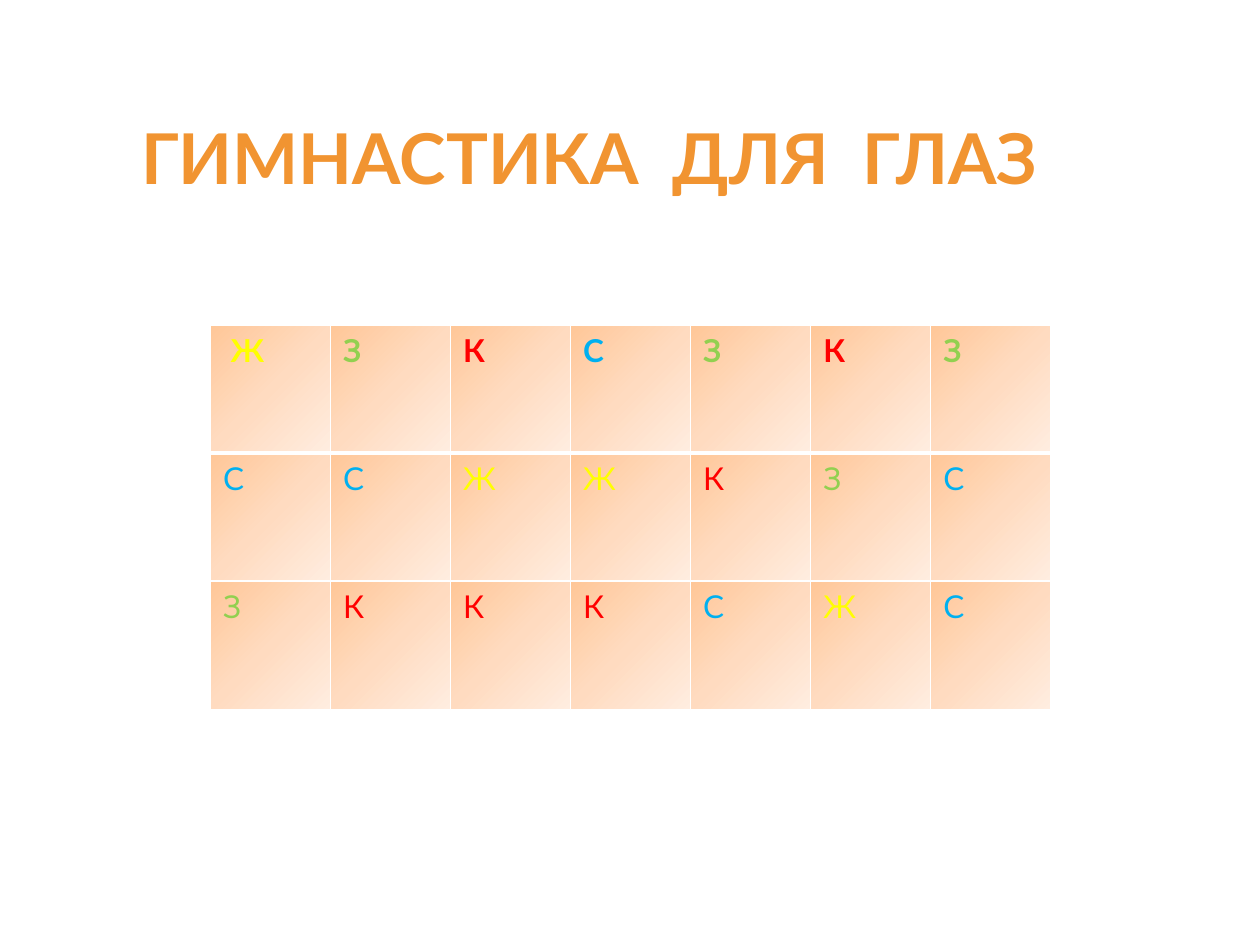
from dataclasses import dataclass

from lxml import etree
from pptx import Presentation
from pptx.dml.color import RGBColor
from pptx.enum.text import MSO_ANCHOR, MSO_AUTO_SIZE, PP_ALIGN
from pptx.oxml.ns import qn
from pptx.util import Inches, Pt

LEFT = PP_ALIGN.LEFT
TOP = MSO_ANCHOR.TOP
FIT_SHAPE = MSO_AUTO_SIZE.SHAPE_TO_FIT_TEXT


@dataclass(frozen=True)
class Theme:
    font: str = "Lato"
    title_size: int = 40
    letter_size: int = 18
    black: str = "000000"
    yellow: str = "FFFF00"
    green: str = "92D050"
    red: str = "FF0000"
    blue: str = "00B0F0"
    border: str = "FFFFFF"
    title_stops: tuple = ((0, "F6A75F"), (49, "F19431"), (50, "DF8B0E"),
                          (92, "C07B14"), (100, "BD7913"))
    cell_stops: tuple = ((0, "FFC798"), (50, "FFDBC0"), (100, "FFEDE0"))


theme = Theme()


def add_gradient(properties, position, stops, angle):
    """Insert a linear gradient fill among the children of a properties element."""
    gradient = etree.Element(qn("a:gradFill"), rotWithShape="1")
    stop_list = etree.SubElement(gradient, qn("a:gsLst"))
    for percent, color in stops:
        stop = etree.SubElement(stop_list, qn("a:gs"), pos=str(percent * 1000))
        etree.SubElement(stop, qn("a:srgbClr"), val=color)
    etree.SubElement(gradient, qn("a:lin"), ang=str(angle * 60000), scaled="0")
    properties.insert(position, gradient)


def write_text(paragraph, text, size, color=None, bold=False, stops=None):
    """Add one formatted run, filled with a solid color or a gradient."""
    paragraph.alignment = LEFT
    run = paragraph.add_run()
    run.text = text
    run.font.name = theme.font
    run.font.size = Pt(size)
    run.font.bold = bold
    if stops:
        add_gradient(run.font._element, 0, stops, angle=90)
    else:
        run.font.color.rgb = RGBColor.from_string(color)


presentation = Presentation()
presentation.slide_width = Inches(10)
presentation.slide_height = Inches(7.5)
slide = presentation.slides.add_slide(presentation.slide_layouts[5])

# Title
title = slide.shapes.title
title.left, title.top = Inches(1.02), Inches(0.86)
title.width, title.height = Inches(8.2), Inches(0.77)
title.text_frame.word_wrap = True
title.text_frame.auto_size = FIT_SHAPE
title.text_frame.vertical_anchor = TOP
write_text(title.text_frame.paragraphs[0], "ГИМНАСТИКА  ДЛЯ  ГЛАЗ",
           size=theme.title_size, bold=True, stops=theme.title_stops)

# Letter grid: each letter has the colour whose name it begins
letter_rows = ["ЖЗКСЗКЗ", "ССЖЖКЗС", "ЗКККСЖС"]
letter_colors = {"Ж": theme.yellow, "З": theme.green,
                 "К": theme.red, "С": theme.blue}
column_count = len(letter_rows[0])
table = slide.shapes.add_table(
    len(letter_rows), column_count, Inches(1.67), Inches(2.58),
    Inches(6.67), Inches(3.05)).table

for row_index, letters in enumerate(letter_rows):
    is_header = row_index == 0
    for column_index, letter in enumerate(letters):
        cell = table.cell(row_index, column_index)
        paragraph = cell.text_frame.paragraphs[0]
        if is_header and column_index == 0:
            write_text(paragraph, " ", size=theme.letter_size,
                       color=theme.black, bold=True)
        write_text(paragraph, letter, size=theme.letter_size,
                   color=letter_colors[letter], bold=is_header)

        # White borders, thicker under the header row
        cell_properties = cell._tc.get_or_add_tcPr()
        border_widths = {"a:lnL": 1, "a:lnR": 1,
                         "a:lnT": 3 if row_index == 1 else 1,
                         "a:lnB": 3 if is_header else 1}
        for tag, width in border_widths.items():
            line = etree.SubElement(cell_properties, qn(tag), w=str(Pt(width)))
            line_fill = etree.SubElement(line, qn("a:solidFill"))
            etree.SubElement(line_fill, qn("a:srgbClr"), val=theme.border)
        add_gradient(cell_properties, len(border_widths), theme.cell_stops, angle=45)

presentation.save("out.pptx")
